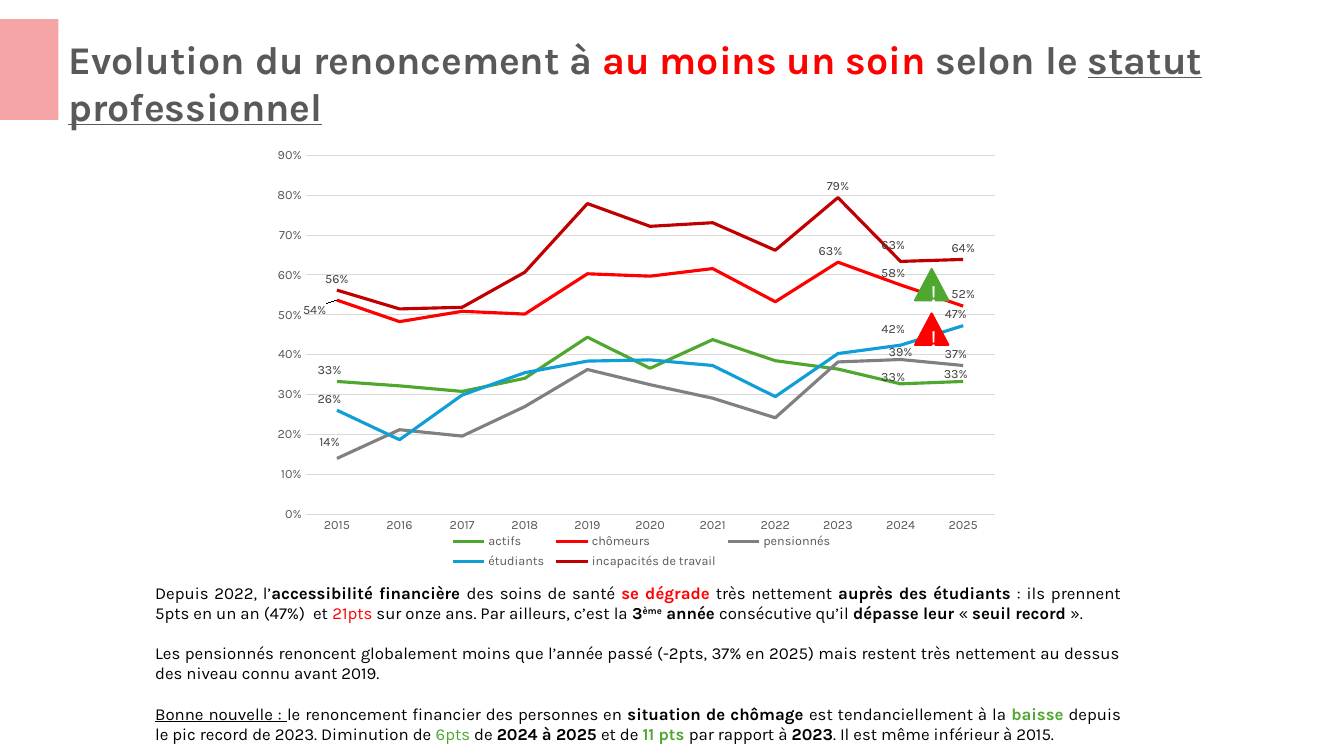
from lxml.etree import SubElement
from pptx import Presentation
from pptx.chart.data import CategoryChartData
from pptx.dml.color import RGBColor
from pptx.enum.chart import XL_CHART_TYPE, XL_LABEL_POSITION, XL_LEGEND_POSITION, XL_TICK_MARK
from pptx.enum.shapes import MSO_SHAPE
from pptx.enum.text import MSO_ANCHOR, MSO_AUTO_SIZE, PP_ALIGN
from pptx.oxml import parse_xml
from pptx.oxml.ns import nsdecls, qn
from pptx.util import Cm, Pt

FONT = "Karla"
RED, GREEN, BLACK, GREY, PALE = "FF0000", "4EA72E", "000000", "595959", "D9D9D9"

# Style letters: b bold, u underlined, s superscript, r red, g green
TITLE = [("Evolution du renoncement à", "b"), (" au moins un soin ", "br"),
         ("selon le ", "b"), ("statut professionnel", "bu")]
NOTES = [
    [("Depuis 2022, l’", ""), ("accessibilité financière ", "b"),
     ("des soins de santé ", ""), ("se dégrade", "br"), (" très nettement ", ""),
     ("auprès des étudiants", "b"), (" : ils prennent 5pts en un an (47%)  et ", ""),
     ("21pts", "r"), (" sur onze ans. Par ailleurs, c’est la ", ""), ("3", "b"),
     ("ème", "bs"), (" année ", "b"), ("consécutive qu’il ", ""),
     ("dépasse leur ", "b"), ("« ", ""), ("seuil record ", "b"), ("». ", "")],
    [("Les pensionnés renoncent globalement moins que l’année passé (-2pts, 37% en 2025) "
      "mais restent très nettement au dessus des niveau connu avant 2019. ", "")],
    [("Bonne nouvelle : ", "u"), ("le renoncement financier des personnes en ", ""),
     ("situation de chômage ", "b"), ("est tendanciellement à la ", ""),
     ("baisse", "bg"), (" depuis le pic record de 2023. Diminution de ", ""),
     ("6pts", "g"), (" de ", ""), ("2024 à 2025 ", "b"), ("et de ", ""),
     ("11 pts ", "bg"), ("par rapport à ", ""), ("2023", "b"),
     (". Il est même inférieur à 2015. ", "")],
]

YEARS = [str(year) for year in range(2015, 2026)]
# Name, colour, values, and label shifts by point as fractions of the chart
SERIES = [
    ("actifs", GREEN,
     [.333, .322, .308, .341, .444, .366, .438, .385, .364, .327, .333],
     {0: (-.01, 0), 9: (-.01, .01), 10: (-.01, .01)}),
    ("chômeurs", RED,
     [.537, .483, .509, .502, .603, .597, .616, .533, .632, .575, .522],
     {0: (-.03, .05), 8: (-.01, 0), 9: (-.01, 0), 10: (0, 0)}),
    ("pensionnés", "808080",
     [.14, .212, .196, .27, .363, .325, .291, .242, .382, .388, .373],
     {0: (-.01, -.01), 9: (0, .01), 10: (-.01, 0)}),
    ("étudiants", "0F9ED5",
     [.261, .187, .299, .355, .384, .387, .373, .295, .403, .424, .473],
     {0: (-.01, 0), 9: (-.01, -.01), 10: (-.01, 0)}),
    ("incapacités de travail", "C00000",
     [.562, .515, .519, .607, .779, .722, .731, .662, .794, .634, .639],
     {0: (0, 0), 8: (0, 0), 9: (-.01, -.01), 10: (0, 0)}),
]


def rgb(code):
    return RGBColor.from_string(code)


def set_font(font, size, color):
    font.name, font.size, font.color.rgb = FONT, Pt(size), rgb(color)


def add_runs(para, runs, size, base):
    for text, style in runs:
        run = para.add_run()
        run.text = text
        color = RED if "r" in style else GREEN if "g" in style else base
        set_font(run.font, size, color)
        run.font.bold = "b" in style
        run.font.underline = "u" in style
        if "s" in style:
            run.font._element.set("baseline", "30000")


def layout(**parts):
    """Return a manual chart layout made of the given elements."""
    node = parse_xml(f"<c:layout {nsdecls('c')}><c:manualLayout/></c:layout>")
    for tag, value in parts.items():
        SubElement(node[0], qn(f"c:{tag}")).set("val", str(value))
    return node


def add_title(slide, box):
    title = slide.shapes.title
    title.left, title.top, title.width, title.height = map(Cm, box)
    frame = title.text_frame
    frame.word_wrap = True
    frame.auto_size = MSO_AUTO_SIZE.NONE
    frame.vertical_anchor = MSO_ANCHOR.MIDDLE
    para = frame.paragraphs[0]
    para.alignment = PP_ALIGN.LEFT
    add_runs(para, TITLE, 28, GREY)


def style_axes(chart):
    years, rates = chart.category_axis, chart.value_axis
    for axis in (years, rates):
        axis.major_tick_mark = axis.minor_tick_mark = XL_TICK_MARK.NONE
        set_font(axis.tick_labels.font, 9, GREY)
    rates.minimum_scale, rates.maximum_scale, rates.major_unit = 0, .9, .1
    rates.tick_labels.number_format = "0%"
    rates.tick_labels.number_format_is_linked = False
    rates.format.line.fill.background()
    for line in (years.format.line, rates.major_gridlines.format.line):
        line.color.rgb, line.width = rgb(PALE), Pt(.75)


def style_series(series, color, shifts):
    series.smooth = False
    series.format.line.color.rgb = rgb(color)
    series.format.line.width = Pt(2.25)
    series.data_labels.show_value = False
    for index, (dx, dy) in shifts.items():
        label = series.points[index].data_label
        set_font(label.font, 9, "404040")
        label.position = XL_LABEL_POSITION.ABOVE
    for node in series._element.iter(qn("c:dLbl")):
        dx, dy = shifts[int(node[0].get("val"))]
        if dx or dy:
            node.insert(1, layout(x=dx, y=dy))


def add_trend(slide, box):
    data = CategoryChartData(number_format="0%")
    data.categories = YEARS
    for name, _, values, _ in SERIES:
        data.add_series(name, values)
    chart = slide.shapes.add_chart(XL_CHART_TYPE.LINE, *map(Cm, box), data).chart
    set_font(chart.font, 10, BLACK)
    chart.has_title = False
    style_axes(chart)
    plot = chart.plots[0]
    plot.vary_by_categories = False
    for series, (_, color, _, shifts) in zip(plot.series, SERIES):
        style_series(series, color, shifts)
    chart.has_legend = True
    legend = chart.legend
    legend.position = XL_LEGEND_POSITION.BOTTOM
    legend.include_in_layout = False
    set_font(legend.font, 9, GREY)
    area = chart._chartSpace.chart.plotArea
    for old in area.findall(qn("c:layout")):
        area.remove(old)
    area.insert(0, layout(layoutTarget="inner", xMode="edge", yMode="edge",
                          x=.052, y=.044, w=.929, h=.821))
    spot = legend._element.find(qn("c:legendPos"))
    for old in legend._element.findall(qn("c:layout")):
        legend._element.remove(old)
    spot.addnext(layout(xMode="edge", yMode="edge", x=.24, y=.9, w=.53, h=.1))


def add_notes(slide, box):
    frame = slide.shapes.add_textbox(*map(Cm, box)).text_frame
    frame.word_wrap = True
    for index, runs in enumerate(NOTES):
        para = frame.add_paragraph() if index else frame.paragraphs[0]
        para.alignment = PP_ALIGN.JUSTIFY
        if index:
            para.space_before = Pt(14.4)
        add_runs(para, runs, 12, BLACK)


def add_alert(slide, box, color):
    sign = slide.shapes.add_shape(MSO_SHAPE.ISOSCELES_TRIANGLE, *map(Cm, box))
    sign.shadow.inherit = False
    sign.fill.solid()
    sign.fill.fore_color.rgb = sign.line.color.rgb = rgb(color)
    sign.line.width = Pt(1.5)
    frame = sign.text_frame
    frame.vertical_anchor = MSO_ANCHOR.MIDDLE
    para = frame.paragraphs[0]
    para.alignment = PP_ALIGN.CENTER
    add_runs(para, [("!", "")], 18, "FFFFFF")


def add_band(slide, box):
    band = slide.shapes.add_shape(MSO_SHAPE.RECTANGLE, *map(Cm, box))
    band.shadow.inherit = False
    band.fill.solid()
    band.fill.fore_color.rgb = rgb("E51517")
    tint = band._element.spPr.find(qn("a:solidFill"))[0]
    SubElement(tint, qn("a:alpha")).set("val", "38000")
    band.line.fill.background()


def main():
    deck = Presentation()
    deck.slide_width, deck.slide_height = Cm(33.87), Cm(19.05)
    slide = deck.slides.add_slide(deck.slide_layouts[5])
    add_title(slide, (1.47, .76, 30.99, 2.64))
    add_trend(slide, (6.73, 3.43, 18.69, 11.02))
    add_notes(slide, (3.66, 14.55, 24.84, 4.37))
    for top, color in ((7.9, RED), (6.78, GREEN)):
        add_alert(slide, (23.06, top, .84, .79), color)
    add_band(slide, (0, .48, 1.47, 2.54))
    deck.save("out.pptx")


if __name__ == "__main__":
    main()
